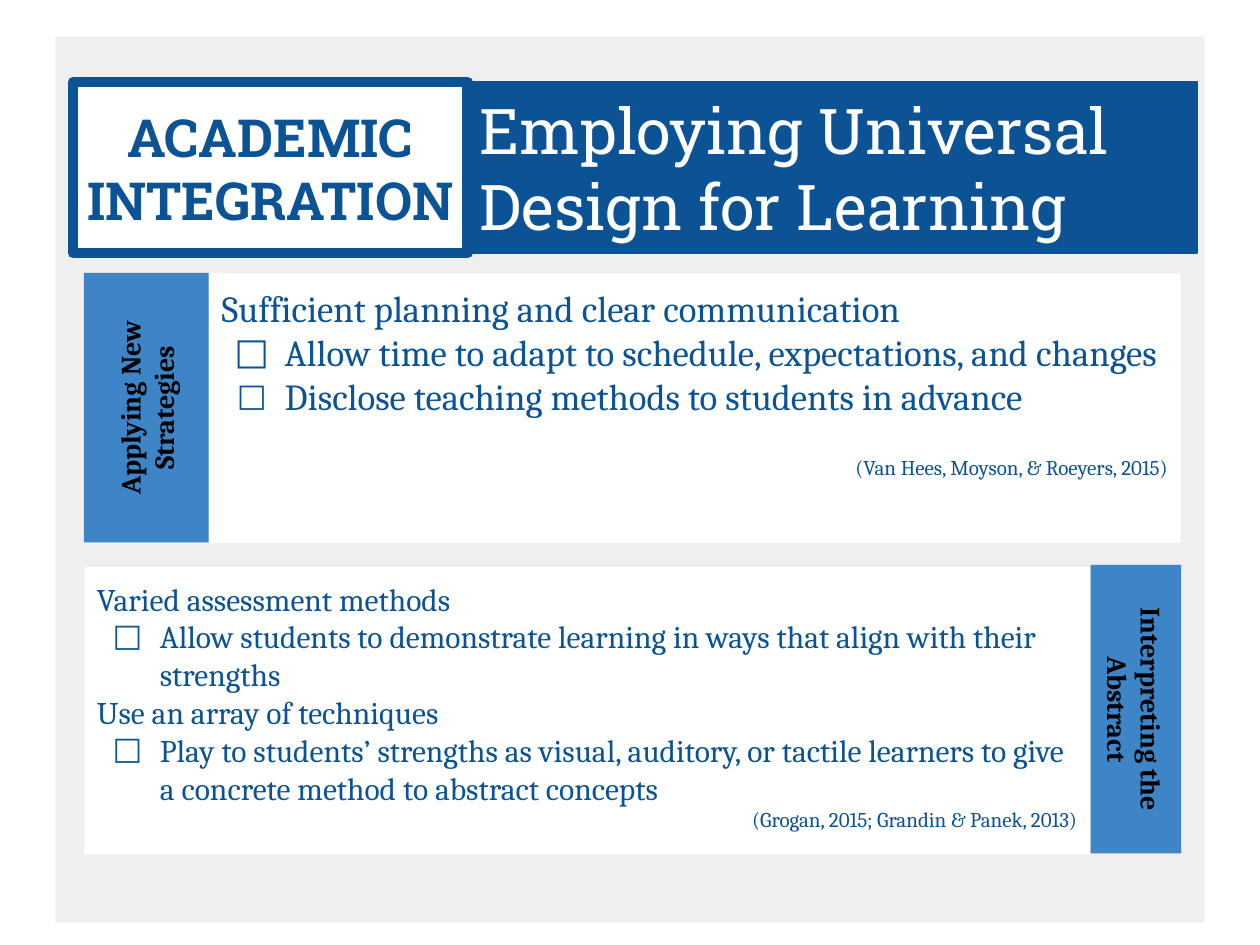
from dataclasses import dataclass

from lxml import etree
from pptx import Presentation
from pptx.dml.color import RGBColor
from pptx.enum import shapes, text
from pptx.oxml.ns import qn
from pptx.util import Pt

NAVY = RGBColor(0x0B, 0x53, 0x94)
BLUE = RGBColor(0x3D, 0x85, 0xC6)
GREY = RGBColor(0xEF, 0xEF, 0xEF)
WHITE = RGBColor(0xFF, 0xFF, 0xFF)
BLACK = RGBColor(0, 0, 0)
SERIF, SLAB = "Cambria", "Roboto Slab"
LEFT, MID, RIGHT = text.PP_ALIGN.LEFT, text.PP_ALIGN.CENTER, text.PP_ALIGN.RIGHT
TOP, CENTRE = text.MSO_ANCHOR.TOP, text.MSO_ANCHOR.MIDDLE


@dataclass
class Box:
    left: float
    top: float
    width: float
    height: float
    fill: RGBColor
    turn: float = 0


@dataclass
class Font:
    name: str
    size: float
    color: RGBColor
    bold: bool = False


@dataclass
class Item:
    words: str
    hang: float = 0  # hanging indent of a bullet; 0 means no bullet
    scale: int = 100  # bullet size in percent


@dataclass
class Panel:
    box: Box
    size: float
    items: list[Item]
    source: str
    gap: float = 0  # space above the source


@dataclass
class Label:
    box: Box
    font: Font
    words: str
    align: text.PP_ALIGN = MID
    anchor: text.MSO_ANCHOR = CENTRE


PANELS = [
    Panel(Box(119.5, 156.2, 555.1, 154.1, WHITE), 21, [
        Item("Sufficient planning and clear communication"),
        Item("Allow time to adapt to schedule, expectations, and changes", 28.8),
        Item("Disclose teaching methods to students in advance", 27.4, 86),
    ], "(Van Hees, Moyson, & Roeyers, 2015)", 21),
    Panel(Box(48.2, 324, 574.6, 164.2, WHITE), 18, [
        Item("Varied assessment methods"),
        Item("Allow students to demonstrate learning in ways that align "
             "with their strengths", 27),
        Item("Use an array of techniques"),
        Item("Play to students’ strengths as visual, auditory, or tactile "
             "learners to give a concrete method to abstract concepts", 27),
    ], "(Grogan, 2015; Grandin & Panek, 2013)"),
]
TAB = Font(SERIF, 16, BLACK, True)
LABELS = [
    Label(Box(6.5, 197.3, 154.1, 71.3, BLUE, 270), TAB, "Applying New Strategies"),
    Label(Box(566.6, 379.4, 164.9, 51.8, BLUE, 90), TAB,
          "Interpreting the Abstract", anchor=TOP),
    Label(Box(267.1, 46.8, 416.9, 97.9, NAVY), Font(SLAB, 36, WHITE),
          "Employing Universal Design for Learning", LEFT),
]
TITLE = Label(Box(41.8, 46.8, 225.4, 97.9, WHITE), Font(SLAB, 30, NAVY, True),
              "ACADEMIC INTEGRATION")


def place(shape, box: Box) -> None:
    shape.left, shape.top = Pt(box.left), Pt(box.top)
    shape.width, shape.height = Pt(box.width), Pt(box.height)
    shape.rotation = box.turn
    shape.fill.solid()
    shape.fill.fore_color.rgb = box.fill


def add_rect(slide, box: Box):
    rect = slide.shapes.add_shape(shapes.MSO_SHAPE.RECTANGLE, 0, 0, 0, 0)
    place(rect, box)
    rect.line.fill.background()
    rect.shadow.inherit = False
    return rect


def set_frame(frame, anchor: text.MSO_ANCHOR) -> None:
    frame.word_wrap = True
    frame.auto_size = text.MSO_AUTO_SIZE.NONE
    frame.vertical_anchor = anchor
    frame.margin_left = frame.margin_right = Pt(7.2)
    frame.margin_top = frame.margin_bottom = Pt(7.2)


def style(para, font: Font, align: text.PP_ALIGN, gap: float = 0) -> None:
    para.alignment = align
    para.line_spacing = 1.0
    para.space_before, para.space_after = Pt(gap), Pt(0)
    for run in para.runs:
        run.font.name = font.name
        run.font.size = Pt(font.size)
        run.font.bold = font.bold
        run.font.color.rgb = font.color


def set_bullet(para, item: Item) -> None:
    props = para._p.get_or_add_pPr()
    props.set("marL", str(Pt(36 if item.hang else 0)))
    props.set("indent", str(-Pt(item.hang)))
    if not item.hang:
        etree.SubElement(props, qn("a:buNone"))
        return
    color = etree.SubElement(props, qn("a:buClr"))
    etree.SubElement(color, qn("a:srgbClr"), val=str(NAVY))
    etree.SubElement(props, qn("a:buSzPct"), val=str(item.scale * 1000))
    etree.SubElement(props, qn("a:buFont"), typeface=SERIF)
    etree.SubElement(props, qn("a:buChar"), char="□")


def write_label(shape, label: Label) -> None:
    set_frame(shape.text_frame, label.anchor)
    shape.text_frame.text = label.words
    style(shape.text_frame.paragraphs[0], label.font, label.align)


def fill_panel(holder, panel: Panel) -> None:
    place(holder, panel.box)
    frame = holder.text_frame
    set_frame(frame, TOP)
    items = panel.items + [Item(panel.source)]
    frame.text = "\n".join(item.words for item in items)
    for para, item in zip(frame.paragraphs, items):
        style(para, Font(SERIF, panel.size, NAVY), LEFT)
        set_bullet(para, item)
    style(frame.paragraphs[-1], Font(SERIF, 12, NAVY), RIGHT, panel.gap)


def main() -> None:
    deck = Presentation()
    deck.slide_width, deck.slide_height = Pt(720), Pt(540)
    slide = deck.slides.add_slide(deck.slide_layouts[3])
    title, *bodies = slide.placeholders

    back = add_rect(slide, Box(31.7, 20.9, 656.6, 506.2, GREY))
    title._element.addprevious(back._element)

    place(title, TITLE.box)
    title.line.color.rgb = NAVY
    title.line.width = Pt(6)
    etree.SubElement(title._element.spPr.find(qn("a:ln")), qn("a:round"))
    write_label(title, TITLE)

    for holder, panel in zip(bodies, PANELS):
        fill_panel(holder, panel)
    for label in LABELS:
        rect = add_rect(slide, label.box)
        write_label(rect, label)
    rect.line.color.rgb = NAVY
    rect.line.width = Pt(0.75)

    deck.save("out.pptx")


if __name__ == "__main__":
    main()
